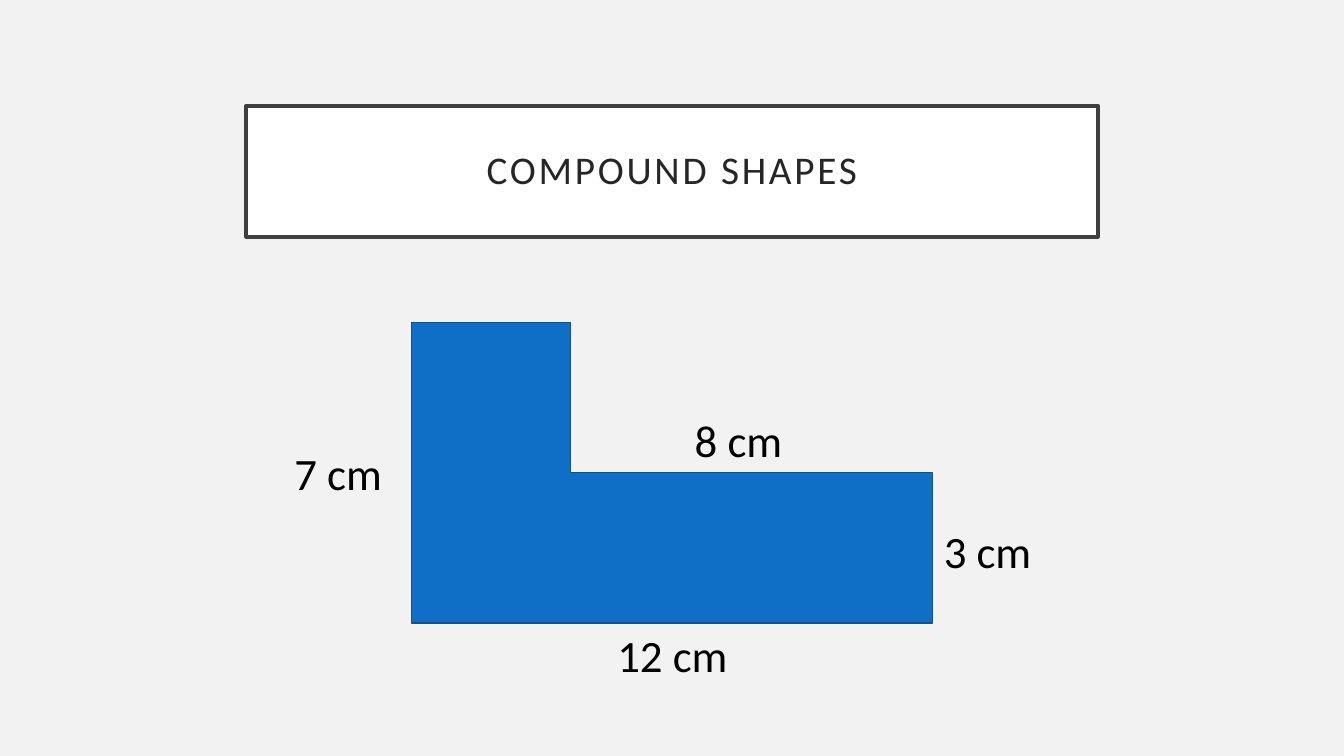
"""Build a slide about the side lengths of a compound shape."""
from dataclasses import dataclass

import pptx
import pptx.dml.color
import pptx.enum.shapes
import pptx.enum.text
import pptx.shapes.autoshape
import pptx.slide
import pptx.text.text
import pptx.util

Inches = pptx.util.Inches
Preset = pptx.enum.shapes.MSO_SHAPE


@dataclass(frozen=True)
class Theme:
    font: str = "Calibri"
    background: str = "F2F2F2"
    banner_fill: str = "FFFFFF"
    banner_line: str = "404040"
    heading: str = "262626"
    figure_fill: str = "0F6FC6"
    figure_line: str = "0B5292"
    label: str = "000000"
    heading_size: float = 28
    label_size: float = 32
    heading_spacing: float = 2


@dataclass(frozen=True)
class Box:
    left: float
    top: float
    width: float
    height: float

    def lengths(self) -> tuple[pptx.util.Length, ...]:
        return tuple(Inches(v) for v in (self.left, self.top, self.width, self.height))


@dataclass(frozen=True)
class SideLength:
    text: str
    box: Box


THEME = Theme()
BANNER = Box(2.44, 1.05, 8.45, 1.3)
FIGURE = Box(4.08, 3.2, 5.17, 2.98)
SIDE_LENGTHS = (
    SideLength("12 cm", Box(6.01, 6.18, 1.32, 0.64)),
    SideLength("3 cm", Box(9.25, 5.15, 1.09, 0.64)),
    SideLength("7 cm", Box(2.81, 4.37, 1.09, 0.64)),
    SideLength("8 cm", Box(6.78, 4.05, 1.09, 0.64)),
)


def rgb(value: str) -> pptx.dml.color.RGBColor:
    return pptx.dml.color.RGBColor.from_string(value)


def add_outlined(
    slide: pptx.slide.Slide, preset: Preset, box: Box, fill: str, line: str, weight: float
) -> pptx.shapes.autoshape.Shape:
    outlined = slide.shapes.add_shape(preset, *box.lengths())
    outlined.shadow.inherit = False
    outlined.fill.solid()
    outlined.fill.fore_color.rgb = rgb(fill)
    outlined.line.color.rgb = rgb(line)
    outlined.line.width = pptx.util.Pt(weight)
    return outlined


def write_centred(
    frame: pptx.text.text.TextFrame, text: str, size: float, color: str
) -> pptx.text.text._Run:
    paragraph = frame.paragraphs[0]
    paragraph.alignment = pptx.enum.text.PP_ALIGN.CENTER
    run = paragraph.add_run()
    run.text = text
    run.font.name = THEME.font
    run.font.size = pptx.util.Pt(size)
    run.font.color.rgb = rgb(color)
    return run


def add_heading(slide: pptx.slide.Slide) -> None:
    banner = add_outlined(
        slide, Preset.RECTANGLE, BANNER, THEME.banner_fill, THEME.banner_line, 2.5
    )
    frame = banner.text_frame
    frame.word_wrap = True
    frame.vertical_anchor = pptx.enum.text.MSO_ANCHOR.MIDDLE
    frame.margin_left = frame.margin_right = Inches(0.2)
    frame.margin_top = frame.margin_bottom = Inches(0.2)
    heading = write_centred(frame, "COMPOUND SHAPES", THEME.heading_size, THEME.heading)
    heading._r.get_or_add_rPr().set("spc", str(round(THEME.heading_spacing * 100)))
    frame.paragraphs[0].line_spacing = 0.9


def add_figure(slide: pptx.slide.Slide) -> None:
    figure = add_outlined(
        slide, Preset.CORNER, FIGURE, THEME.figure_fill, THEME.figure_line, 1
    )
    figure.adjustments[0] = 0.5
    figure.adjustments[1] = 0.53


def add_side_length(slide: pptx.slide.Slide, side: SideLength) -> None:
    frame = slide.shapes.add_textbox(*side.box.lengths()).text_frame
    frame.word_wrap = False
    frame.auto_size = pptx.enum.text.MSO_AUTO_SIZE.SHAPE_TO_FIT_TEXT
    write_centred(frame, side.text, THEME.label_size, THEME.label)


def main() -> None:
    presentation = pptx.Presentation()
    presentation.slide_width = Inches(13.33)
    presentation.slide_height = Inches(7.5)
    slide = presentation.slides.add_slide(presentation.slide_layouts[6])
    slide.background.fill.solid()
    slide.background.fill.fore_color.rgb = rgb(THEME.background)
    add_heading(slide)
    add_figure(slide)
    for side in SIDE_LENGTHS:
        add_side_length(slide, side)
    presentation.save("out.pptx")


if __name__ == "__main__":
    main()
